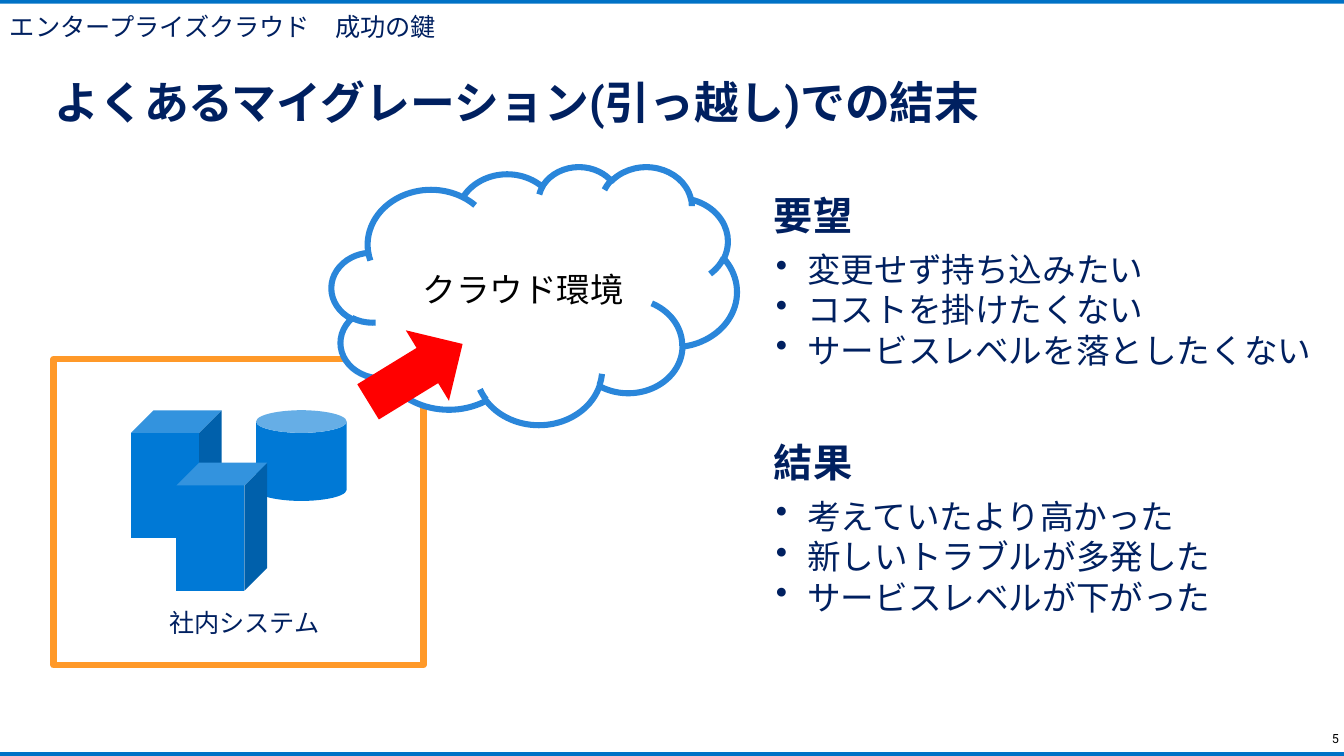
from lxml import etree
from pptx import Presentation
from pptx.dml.color import RGBColor
from pptx.enum.shapes import MSO_SHAPE
from pptx.enum.text import MSO_ANCHOR, PP_ALIGN
from pptx.oxml.ns import qn
from pptx.util import Inches, Pt

RECT, CAN, CUBE = MSO_SHAPE.RECTANGLE, MSO_SHAPE.CAN, MSO_SHAPE.CUBE
CLOUD, ARROW = MSO_SHAPE.CLOUD, MSO_SHAPE.RIGHT_ARROW
LEFT, CENTER, RIGHT = PP_ALIGN.LEFT, PP_ALIGN.CENTER, PP_ALIGN.RIGHT
TOP, MIDDLE = MSO_ANCHOR.TOP, MSO_ANCHOR.MIDDLE

NAVY = RGBColor(0x00, 0x20, 0x60)
BAR_BLUE = RGBColor(0x00, 0x72, 0xC6)
SYSTEM_BLUE = RGBColor(0x00, 0x79, 0xD6)
CLOUD_BLUE = RGBColor(0x2A, 0x86, 0xDA)
ORANGE = RGBColor(0xFF, 0x99, 0x29)
RED = RGBColor(0xFF, 0x00, 0x00)
WHITE = RGBColor(0xFF, 0xFF, 0xFF)
BLACK = RGBColor(0x00, 0x00, 0x00)

SLIDE_W, SLIDE_H = Inches(13.33), Inches(7.5)
FONT, CLOUD_FONT = "Roboto", "Noto Sans CJK JP"
LINE_W = Pt(4.33)
INDENT = Inches(0.31)
HEADING_H = 7.6

SECTIONS = [
    (24.67, "要望", ["変更せず持ち込みたい", "コストを掛けたくない", "サービスレベルを落としたくない"]),
    (57.33, "結果", ["考えていたより高かった", "新しいトラブルが多発した", "サービスレベルが下がった"]),
]


def place(x, y, w, h):
    """Turn percentages of the slide into left, top, width and height."""
    return [int(v * side / 100) for v, side in zip((x, y, w, h), (SLIDE_W, SLIDE_H) * 2)]


def write(tf, lines, size, color=NAVY, bold=False, align=LEFT, font=FONT):
    """Write one paragraph per line in a single font."""
    for i, line in enumerate(lines):
        p = tf.paragraphs[0] if i == 0 else tf.add_paragraph()
        p.text = line
        p.alignment = align
        p.font.name, p.font.size, p.font.bold = font, Pt(size), bold
        p.font.color.rgb = color


def add_text(s, box, lines, size, **style):
    """Add an unwrapped text box and return its text frame."""
    tf = s.shapes.add_textbox(*place(*box)).text_frame
    tf.word_wrap = False
    write(tf, lines, size, **style)
    return tf


def add_shape(s, kind, box, fill, line=None):
    """Add a flat preset shape with an optional outline."""
    sp = s.shapes.add_shape(kind, *place(*box))
    sp.shadow.inherit = False
    sp.fill.solid()
    sp.fill.fore_color.rgb = fill
    if line is None:
        sp.line.fill.background()
    else:
        sp.line.color.rgb = line
        sp.line.width = LINE_W
    return sp


def add_bullets(tf):
    """Give every paragraph a bullet with a hanging indent."""
    for p in tf.paragraphs:
        pPr = p._p.get_or_add_pPr()
        pPr.set("marL", str(INDENT))
        pPr.set("indent", str(-INDENT))
        bullet = etree.Element(qn("a:buChar"), char="•")
        pPr.insert(0, bullet)


def add_title(s, text):
    """Move and format the title placeholder."""
    title = s.shapes.title
    title.left, title.top, title.width, title.height = place(3.3, 9.2, 71.1, 8.53)
    tf = title.text_frame
    tf.word_wrap = True
    tf.vertical_anchor = TOP
    write(tf, [text], 32, bold=True)


def add_system(s):
    """Draw the framed in-house system."""
    add_shape(s, RECT, (3.98, 47.47, 27.53, 40.53), WHITE, ORANGE)
    add_shape(s, CAN, (19.05, 54.27, 6.75, 12), SYSTEM_BLUE)
    for x, y in ((9.75, 54.27), (13.13, 61.2)):
        add_shape(s, CUBE, (x, y, 6.75, 16.93), SYSTEM_BLUE)
    add_text(s, (11.85, 79.73, 12.9, 5.33), ["社内システム"], 18)


def add_cloud(s):
    """Draw the cloud and the arrow that leads into it."""
    cloud = add_shape(s, CLOUD, (24.68, 22, 30.15, 34.13), WHITE, CLOUD_BLUE)
    tf = cloud.text_frame
    tf.margin_left = Inches(0.12)
    tf.margin_right = Inches(0.05)
    tf.vertical_anchor = MIDDLE
    write(tf, ["クラウド環境"], 24, color=BLACK, align=CENTER, font=CLOUD_FONT)
    arrow = add_shape(s, ARROW, (26.78, 43.87, 8.25, 10.93), RED)
    arrow.rotation = 328.5


def add_section(s, y, heading, items):
    """Add a heading with its bullet list below."""
    add_text(s, (56.85, y, 7.43, HEADING_H), [heading], 28, bold=True)
    add_bullets(add_text(s, (57, y + HEADING_H, 41.78, 17.47), items, 24))


def main():
    """Build the slide and save it."""
    prs = Presentation()
    prs.slide_width, prs.slide_height = SLIDE_W, SLIDE_H
    s = prs.slides.add_slide(prs.slide_layouts[5])
    for y in (0, 99.5):
        add_shape(s, RECT, (0, y, 100, 0.5), BAR_BLUE)
    number = add_text(s, (94.9, 96, 5.1, 3.33), ["5"], 9, color=BLACK, align=RIGHT)
    number.word_wrap = True
    number.margin_right = Inches(0.05)
    number.vertical_anchor = MIDDLE
    add_text(s, (0, 0.8, 33.7, 5.33), ["エンタープライズクラウド　成功の鍵"], 18)
    add_title(s, "よくあるマイグレーション(引っ越し)での結末")
    add_system(s)
    add_cloud(s)
    for section in SECTIONS:
        add_section(s, *section)
    prs.save("out.pptx")


if __name__ == "__main__":
    main()
